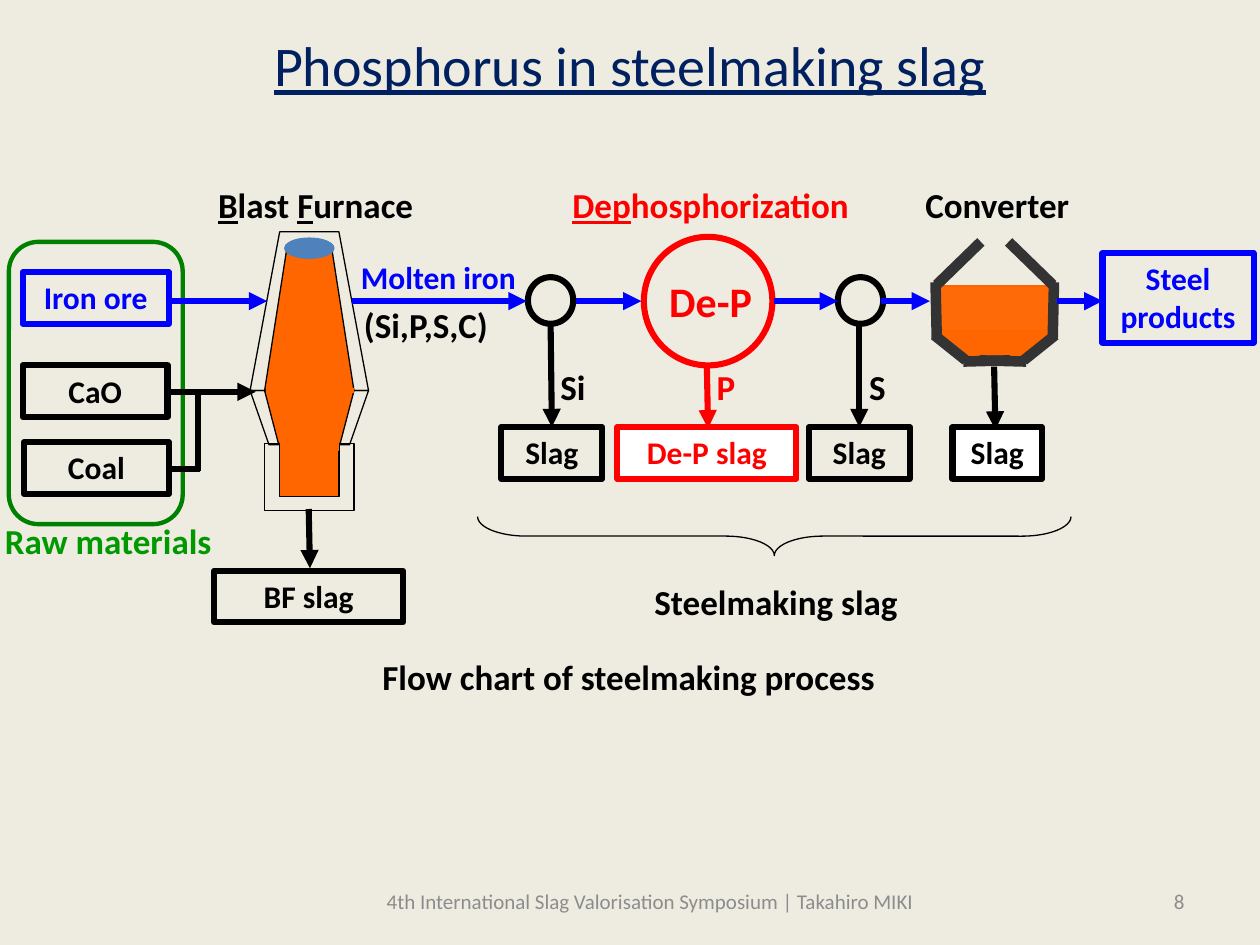
from dataclasses import dataclass
from typing import Optional

from lxml import etree
from pptx import Presentation
from pptx import util as u
from pptx.dml.color import RGBColor
from pptx.enum import shapes, text
from pptx.oxml import ns

COLORS = {
    "background": "EEECE1", "black": "000000", "white": "FFFFFF",
    "blue": "0000FF", "red": "FF0000", "green": "008000",
    "raw": "009900", "molten": "FF6600", "gas": "4F81BD",
    "vessel": "333333", "title": "002060", "footer": "8C8C8C",
}
KIND = shapes.MSO_SHAPE
LEFT, CENTER, RIGHT = text.PP_ALIGN.LEFT, text.PP_ALIGN.CENTER, text.PP_ALIGN.RIGHT
TOP, MIDDLE = text.MSO_ANCHOR.TOP, text.MSO_ANCHOR.MIDDLE
FLOW_Y = 2.39
FURNACE_X = 2.455
VESSEL_X = 7.895


@dataclass
class Outline:
    box: tuple
    kind: int = KIND.RECTANGLE
    line: str = "black"
    width: float = 3.5
    fill: Optional[str] = None
    words: str = ""
    adjustment: Optional[float] = None
    rotation: int = 0


@dataclass
class Label:
    box: tuple
    runs: tuple
    size: int = 20
    color: str = "black"
    align: int = CENTER
    bold: bool = True
    anchor: int = TOP


@dataclass
class Trapezoid:
    center: float
    top: float
    bottom: float
    half_top: float
    half_bottom: float
    fill: Optional[str] = None
    line: Optional[str] = "black"


@dataclass
class Flow:
    start: tuple
    end: tuple
    color: str = "black"
    width: float = 3.5
    arrow: bool = True


def rgb(name: str) -> RGBColor:
    return RGBColor.from_string(COLORS[name])


def paint(shape, fill: Optional[str], line: Optional[str], width: float) -> None:
    shape.shadow.inherit = False
    if fill:
        shape.fill.solid()
        shape.fill.fore_color.rgb = rgb(fill)
    else:
        shape.fill.background()
    if line:
        shape.line.color.rgb = rgb(line)
        shape.line.width = u.Pt(width)
    else:
        shape.line.fill.background()


def write(shape, label: Label) -> None:
    frame = shape.text_frame
    layout = {"word_wrap": True, "vertical_anchor": label.anchor}
    for name, value in layout.items():
        setattr(frame, name, value)
    paragraph = frame.paragraphs[0]
    paragraph.alignment = label.align
    for words, underline in label.runs:
        run = paragraph.add_run()
        run.text = words
        style = {"name": "Calibri", "size": u.Pt(label.size),
                 "bold": label.bold, "underline": underline}
        for name, value in style.items():
            setattr(run.font, name, value)
        run.font.color.rgb = rgb(label.color)


def draw_outline(slide, outline: Outline):
    shape = slide.shapes.add_shape(outline.kind, *map(u.Inches, outline.box))
    paint(shape, outline.fill, outline.line, outline.width)
    shape.rotation = outline.rotation
    if outline.adjustment is not None:
        shape.adjustments[0] = outline.adjustment
    if outline.words:
        write(shape, Label(outline.box, ((outline.words, False),), 18, outline.line))
    return shape


def draw_label(slide, label: Label) -> None:
    write(slide.shapes.add_textbox(*map(u.Inches, label.box)), label)


def draw_trapezoid(slide, part: Trapezoid) -> None:
    corners = [(u.Inches(part.center + dx), u.Inches(y)) for dx, y in (
        (-part.half_bottom, part.bottom), (-part.half_top, part.top),
        (part.half_top, part.top), (part.half_bottom, part.bottom))]
    builder = slide.shapes.build_freeform(*corners[0])
    builder.add_line_segments(corners[1:], close=True)
    paint(builder.convert_to_shape(), part.fill, part.line, 0.75)


def draw_flow(slide, flow: Flow) -> None:
    connector = slide.shapes.add_connector(
        shapes.MSO_CONNECTOR.STRAIGHT, *map(u.Inches, flow.start + flow.end))
    connector.line.color.rgb = rgb(flow.color)
    connector.line.width = u.Pt(flow.width)
    if flow.arrow:
        etree.SubElement(connector.line._get_or_add_ln(), ns.qn("a:tailEnd"), type="triangle")
    etree.SubElement(connector._element.spPr, ns.qn("a:effectLst"))


def draw_furnace(slide) -> None:
    for part in (
        Trapezoid(FURNACE_X, 1.95, 3.1, 0.175, 0.355, "molten"),
        Trapezoid(FURNACE_X, 1.84, 3.1, 0.235, 0.47),
        Trapezoid(FURNACE_X, 3.52, 3.1, 0.245, 0.355, "molten"),
    ):
        draw_trapezoid(slide, part)
    draw_outline(slide, Outline((2.22, 3.52, 0.47, 0.42), width=0.75, fill="molten"))
    draw_trapezoid(slide, Trapezoid(FURNACE_X, 3.53, 3.1, 0.32, 0.47))
    draw_outline(slide, Outline((2.1, 3.52, 0.71, 0.53), width=0.75))
    draw_outline(slide, Outline((2.26, 1.89, 0.39, 0.16), KIND.OVAL, "gas", 0.75, "gas"))
    draw_flow(slide, Flow((2.22, 3.54), (2.69, 3.54), "molten", 6, False))
    draw_flow(slide, Flow((2.11, 3.1), (2.81, 3.1), "molten", 3, False))


def draw_converter(slide) -> None:
    melt = draw_outline(slide, Outline((7.44, 2.27, 0.9, 0.35), line="molten", width=0.75, fill="molten"))
    tint = melt._element.spPr.find(ns.qn("a:solidFill"))[0]
    etree.SubElement(tint, ns.qn("a:alpha"), val="97000")
    draw_trapezoid(slide, Trapezoid(VESSEL_X, 2.9, 2.62, 0.185, 0.455, "molten", None))
    walls = (((0.11, 1.92), (0.46, 2.26)), ((0.47, 2.24), (0.46, 2.69)),
             ((0.48, 2.66), (0.23, 2.86)), ((0.25, 2.87), (-0.12, 2.86)))
    for side in (-1, 1):
        for (dx1, y1), (dx2, y2) in walls:
            draw_flow(slide, Flow((VESSEL_X + side * dx1, y1), (VESSEL_X + side * dx2, y2),
                                  "vessel", 6, False))


OUTLINES = (
    Outline((0.18, 2.16, 1.16, 0.41), line="blue", words="Iron ore"),
    Outline((0.18, 2.9, 1.15, 0.41), words="CaO"),
    Outline((0.19, 3.51, 1.15, 0.41), words="Coal"),
    Outline((1.7, 4.53, 1.5, 0.41), words="BF slag"),
    Outline((3.98, 3.39, 0.8, 0.41), words="Slag"),
    Outline((4.9, 3.39, 1.42, 0.41), line="red", fill="white", words="De-P slag"),
    Outline((6.42, 3.39, 0.8, 0.41), words="Slag"),
    Outline((7.56, 3.39, 0.71, 0.41), fill="white", words="Slag"),
    Outline((8.75, 2.01, 1.2, 0.71), line="blue", words="Steel products"),
    Outline((4.19, 2.2, 0.36, 0.37), KIND.OVAL),
    Outline((5.11, 1.88, 1.02, 1.02), KIND.OVAL, "red"),
    Outline((6.65, 2.2, 0.36, 0.37), KIND.OVAL),
    Outline((5.99, 1.9, 0.31, 4.71), KIND.RIGHT_BRACE, width=0.75, adjustment=1.25, rotation=90),
    Outline((0.07, 1.92, 1.38, 2.24), KIND.ROUNDED_RECTANGLE, "green", 2.5, adjustment=0.17),
)
IRON_STEPS = ((1.36, 2.12), (2.79, 4.18), (4.57, 5.09), (6.14, 6.65), (6.99, 7.38), (8.39, 8.75))
FLOWS = tuple(Flow((x1, FLOW_Y), (x2, FLOW_Y), "blue") for x1, x2 in IRON_STEPS) + (
    Flow((4.37, 2.56), (4.38, 3.39)),
    Flow((5.61, 2.9), (5.62, 3.4), "red"),
    Flow((6.82, 2.56), (6.82, 3.39)),
    Flow((7.89, 2.91), (7.9, 3.41)),
    Flow((2.45, 4.04), (2.46, 4.51)),
    Flow((1.35, 3.11), (2.03, 3.11)),
    Flow((1.36, 3.72), (1.59, 3.72), arrow=False),
    Flow((1.57, 3.11), (1.57, 3.74), arrow=False),
)
LABELS = (
    Label((0, 0.17, 10, 0.68), (("Phosphorus in steelmaking slag", True),), 32, "title", bold=False, anchor=MIDDLE),
    Label((1.49, 1.41, 2.03, 0.43), (("B", True), ("last ", False), ("F", True), ("urnace", False))),
    Label((4.36, 1.41, 2.56, 0.43), (("Dep", True), ("hosphorization", False)), color="red"),
    Label((6.9, 1.41, 2.03, 0.43), (("Converter", False),)),
    Label((2.56, 2, 1.84, 0.41), (("Molten iron", False),), 18, "blue"),
    Label((2.79, 2.36, 1.39, 0.43), (("(Si,P,S,C)", False),), align=LEFT),
    Label((5.1, 2.14, 1.08, 0.5), (("De-P", False),), 24, "red"),
    Label((4.35, 2.85, 0.5, 0.43), (("Si", False),), align=LEFT),
    Label((5.59, 2.85, 0.5, 0.43), (("P", False),), color="red", align=LEFT),
    Label((6.8, 2.85, 0.5, 0.43), (("S", False),), align=LEFT),
    Label((-0.06, 4.07, 2.03, 0.43), (("Raw materials", False),), color="raw", align=LEFT),
    Label((4.94, 4.56, 2.44, 0.44), (("Steelmaking slag", False),)),
    Label((2.35, 5.15, 5.28, 0.43), (("Flow chart of steelmaking process", False),)),
    Label((7.17, 6.95, 2.33, 0.4), (("8", False),), 12, "footer", RIGHT, False, MIDDLE),
    Label((2.27, 6.95, 5.78, 0.4), (("4th International Slag Valorisation Symposium | Takahiro MIKI", False),),
          12, "footer", CENTER, False, MIDDLE),
)


def main() -> None:
    deck = Presentation()
    deck.slide_width, deck.slide_height = u.Inches(10), u.Inches(7.5)
    slide = deck.slides.add_slide(deck.slide_layouts[6])
    slide.background.fill.solid()
    slide.background.fill.fore_color.rgb = rgb("background")
    draw_furnace(slide)
    draw_converter(slide)
    for draw, items in ((draw_outline, OUTLINES), (draw_flow, FLOWS), (draw_label, LABELS)):
        for item in items:
            draw(slide, item)
    deck.save("out.pptx")


if __name__ == "__main__":
    main()
